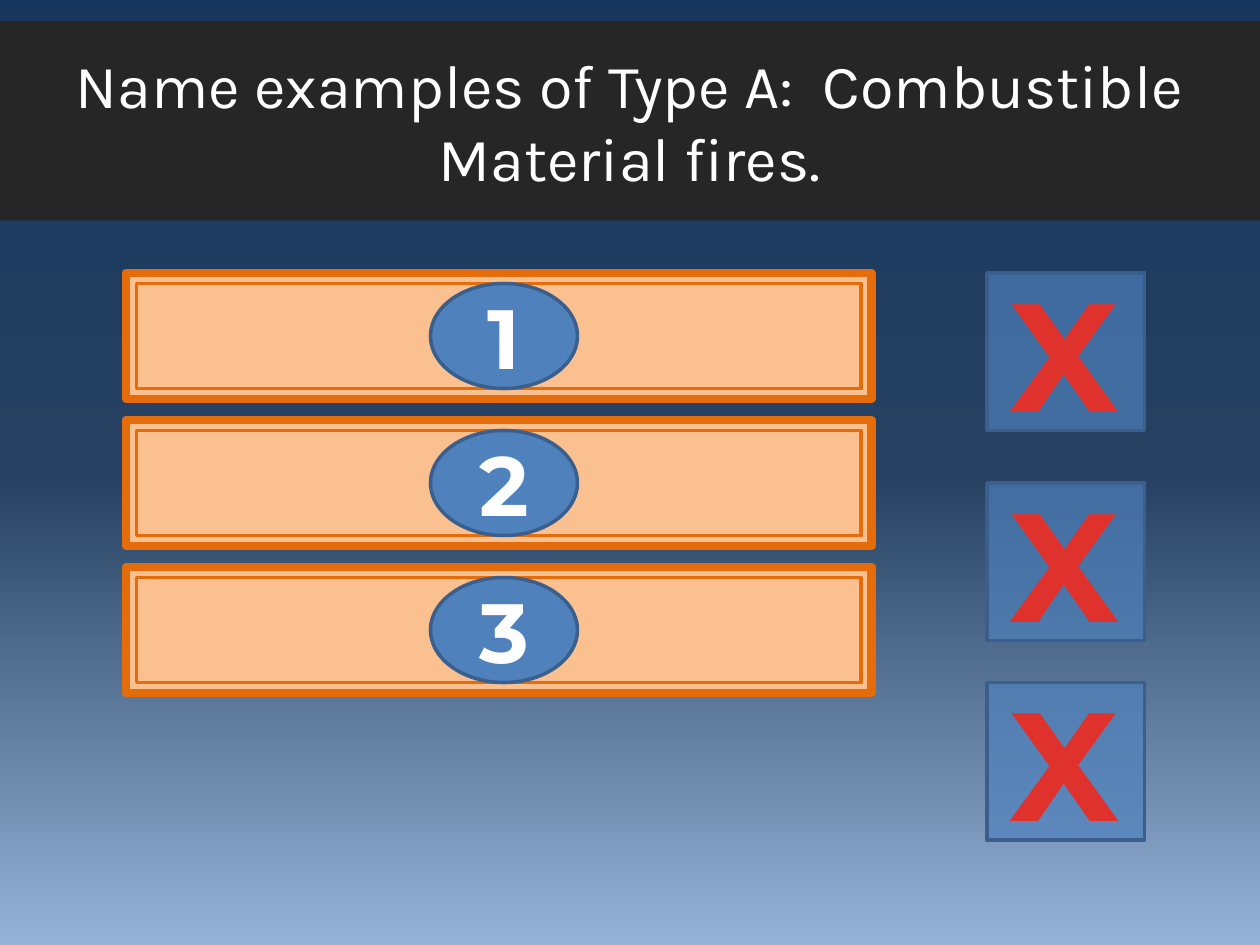
from copy import deepcopy
from dataclasses import dataclass
from typing import Any

from lxml import etree
from pptx import Presentation
from pptx.dml.color import RGBColor
from pptx.enum.shapes import MSO_SHAPE
from pptx.enum.text import MSO_ANCHOR, MSO_AUTO_SIZE, PP_ALIGN
from pptx.oxml.ns import qn
from pptx.util import Emu, Pt

RECTANGLE = MSO_SHAPE.RECTANGLE
OVAL = MSO_SHAPE.OVAL
MIDDLE = MSO_ANCHOR.MIDDLE
TOP = MSO_ANCHOR.TOP
CENTER = PP_ALIGN.CENTER
GROW = MSO_AUTO_SIZE.SHAPE_TO_FIT_TEXT

EMU_PER_PX = 7620
SLIDE_WIDTH, SLIDE_HEIGHT = 1200, 900

COLORS = {
    "navy": "17375E",
    "deep_blue": "254061",
    "sky": "95B3D7",
    "banner": "262626",
    "answer": "FAC090",
    "answer_edge": "E46C0A",
    "blue": "4F81BD",
    "blue_edge": "3A5F8C",
    "strike": "E0322D",
    "white": "FFFFFF",
}
BACKGROUND_STOPS = ((0, "navy"), (0.5, "deep_blue"), (1, "sky"))

TITLE_FONT = {"name": "Karla", "size": Pt(35), "bold": False}
NUMBER_FONT = {"name": "Montserrat", "size": Pt(48), "bold": True}
STRIKE_FONT = {"name": "Montserrat", "size": Pt(88), "bold": True}
CENTERED_FRAME = {"word_wrap": True, "vertical_anchor": MIDDLE}
STRIKE_FRAME = {"word_wrap": False, "vertical_anchor": TOP, "auto_size": GROW}

ANSWER_TOP, ANSWER_PITCH, ANSWER_COUNT = 260, 140, 3
STRIKE_TOPS = (260, 460, 650)


@dataclass(frozen=True)
class Box:
    left: int
    top: int
    width: int
    height: int

    def emu(self) -> list[Emu]:
        return [Emu(px * EMU_PER_PX)
                for px in (self.left, self.top, self.width, self.height)]


@dataclass(frozen=True)
class Style:
    fill: str
    edge: str | None = None
    edge_points: int = 0


BANNER = Style("banner")
ANSWER_FRAME = Style("answer", "answer_edge", 5)
ANSWER_PANEL = Style("answer", "answer_edge", 2)
BLUE_SHAPE = Style("blue", "blue_edge", 2)


def rgb(name: str) -> RGBColor:
    return RGBColor.from_string(COLORS[name])


def apply(target: Any, values: dict[str, Any]) -> None:
    for name, value in values.items():
        setattr(target, name, value)


def add_shape(shapes: Any, kind: Any, box: Box, style: Style) -> Any:
    shape = shapes.add_shape(kind, *box.emu())
    shape.shadow.inherit = False
    shape.fill.solid()
    shape.fill.fore_color.rgb = rgb(style.fill)
    if style.edge:
        shape.line.color.rgb = rgb(style.edge)
        shape.line.width = Pt(style.edge_points)
    else:
        shape.line.fill.background()
    return shape


def write_text(shape: Any, text: str, color: str, font: dict[str, Any],
               frame: dict[str, Any]) -> Any:
    apply(shape.text_frame, frame)
    paragraph = shape.text_frame.paragraphs[0]
    paragraph.alignment = CENTER
    run = paragraph.add_run()
    run.text = text
    apply(run.font, font)
    run.font.color.rgb = rgb(color)
    return run


def add_background(slide: Any) -> None:
    box = Box(0, 0, SLIDE_WIDTH, SLIDE_HEIGHT)
    shape = add_shape(slide.shapes, RECTANGLE, box, Style("navy"))
    shape.fill.gradient()
    shape.fill.gradient_angle = 270
    stop_list = shape._element.spPr.find(".//" + qn("a:gsLst"))
    stop_list.append(deepcopy(stop_list[-1]))
    for stop, (position, color) in zip(shape.fill.gradient_stops, BACKGROUND_STOPS):
        stop.position = position
        stop.color.rgb = rgb(color)


def add_answer(slide: Any, number: int) -> None:
    top = ANSWER_TOP + (number - 1) * ANSWER_PITCH
    shapes = slide.shapes.add_group_shape().shapes
    add_shape(shapes, RECTANGLE, Box(120, top, 710, 120), ANSWER_FRAME)
    add_shape(shapes, RECTANGLE, Box(130, top + 10, 690, 100), ANSWER_PANEL)
    oval = add_shape(shapes, OVAL, Box(410, top + 10, 140, 100), BLUE_SHAPE)
    write_text(oval, str(number), "white", NUMBER_FONT, CENTERED_FRAME)


def add_strike(slide: Any, top: int) -> None:
    square = add_shape(slide.shapes, RECTANGLE, Box(940, top, 150, 150), BLUE_SHAPE)
    color = square._element.spPr.find(qn("a:solidFill"))[0]
    etree.SubElement(color, qn("a:alpha"), val="69000")
    label = slide.shapes.add_textbox(*Box(950, top - 20, 127, 190).emu())
    run = write_text(label, "X", "strike", STRIKE_FONT, STRIKE_FRAME)
    run.font._element.set("spc", "50")


def main() -> None:
    presentation = Presentation()
    presentation.slide_width = Emu(SLIDE_WIDTH * EMU_PER_PX)
    presentation.slide_height = Emu(SLIDE_HEIGHT * EMU_PER_PX)
    slide = presentation.slides.add_slide(presentation.slide_layouts[6])

    add_background(slide)
    banner = add_shape(slide.shapes, RECTANGLE, Box(0, 20, SLIDE_WIDTH, 190), BANNER)
    write_text(banner, "Name examples of Type A:  Combustible Material fires.",
               "white", TITLE_FONT, CENTERED_FRAME)
    for number in range(ANSWER_COUNT, 0, -1):
        add_answer(slide, number)
    for top in STRIKE_TOPS:
        add_strike(slide, top)

    presentation.save("out.pptx")


if __name__ == "__main__":
    main()
